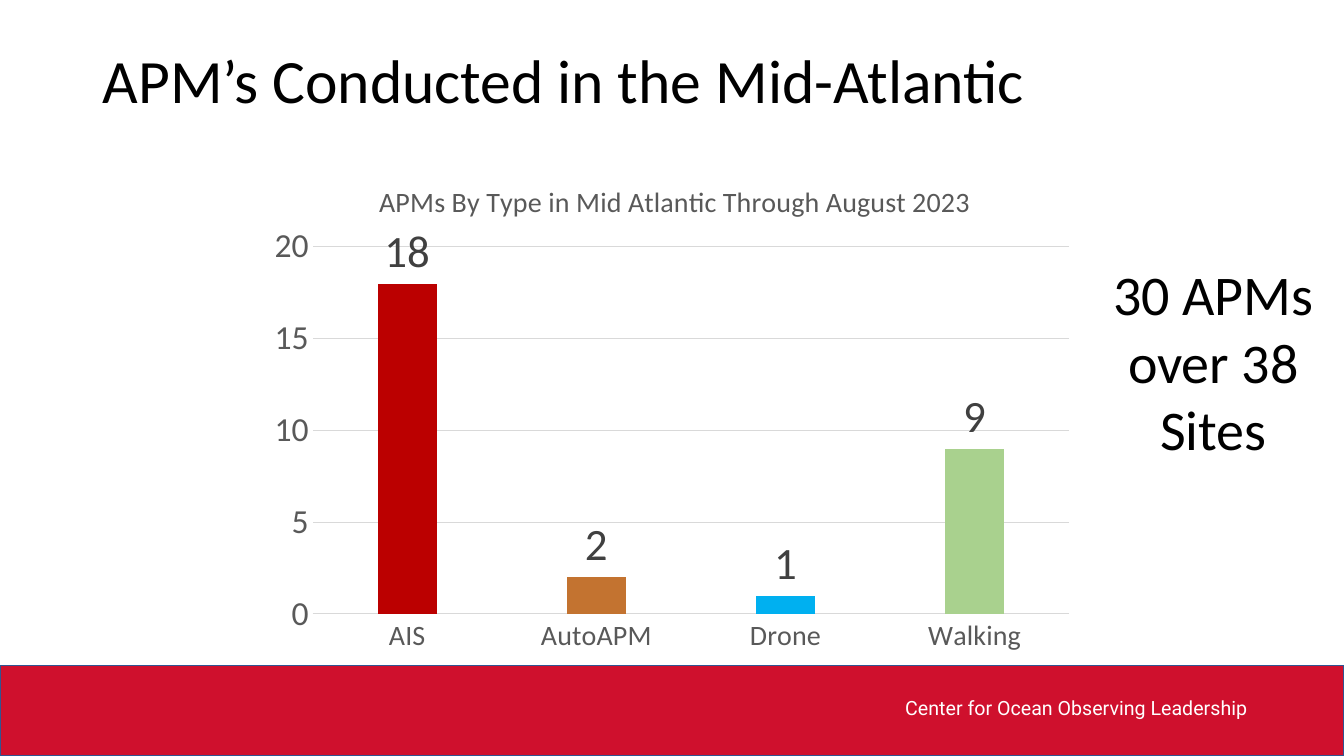
from pptx import Presentation
from pptx.chart.data import CategoryChartData as ChartData
from pptx.dml.color import RGBColor as RGB
from pptx.enum.chart import XL_CHART_TYPE as Kind, XL_LABEL_POSITION as Pos
from pptx.enum.chart import XL_TICK_MARK as Tick
from pptx.enum.shapes import MSO_SHAPE as Shape
from pptx.enum.text import MSO_ANCHOR as Anchor, PP_ALIGN as Align
from pptx.oxml import parse_xml
from pptx.oxml.ns import nsdecls
from pptx.util import Inches, Pt

RED = RGB(0xCF, 0x10, 0x2D)
NAVY = RGB(0x32, 0x54, 0x91)
WHITE = RGB(0xFF, 0xFF, 0xFF)
BLACK = RGB(0, 0, 0)
GRAY = RGB(0x59, 0x59, 0x59)
DARK = RGB(0x40, 0x40, 0x40)
PALE = RGB(0xD9, 0xD9, 0xD9)
BLUE = RGB(0x44, 0x72, 0xC4)
COUNTS = {
    "AIS": (18, RGB(0xBB, 0, 0)),
    "AutoAPM": (2, RGB(0xC3, 0x73, 0x30)),
    "Drone": (1, RGB(0, 0xB0, 0xF0)),
    "Walking": (9, RGB(0xA9, 0xD1, 0x8E)),
}


def style(font, size, color, name="Calibri"):
    font.size, font.name, font.bold = Pt(size), name, False
    font.color.rgb = color


def add_text(slide, box, text, size, color=BLACK, font="Calibri",
             align=Align.LEFT, anchor=Anchor.TOP, spacing=None):
    frame = slide.shapes.add_textbox(*map(Inches, box)).text_frame
    frame.word_wrap = True
    frame.vertical_anchor = anchor
    para = frame.paragraphs[0]
    para.alignment = align
    para.line_spacing = spacing
    run = para.add_run()
    run.text = text
    style(run.font, size, color, font)


def add_footer(slide, box):
    left, top, width, height = box
    band = slide.shapes.add_shape(Shape.RECTANGLE, *map(Inches, box))
    band.shadow.inherit = False
    band.fill.solid()
    band.fill.fore_color.rgb = RED
    band.line.color.rgb = NAVY
    band.line.width = Pt(1)
    add_text(slide, (left + width - 4.45, top + 0.26, 3.7, 0.34),
             "Center for Ocean Observing Leadership", 14, WHITE, "Roboto")


def set_layout(parent, index, **parts):
    """Place a chart part by fractions of the chart's size."""
    for old in parent.xpath("c:layout"):
        parent.remove(old)
    inner = '<c:layoutTarget val="inner"/>' if "w" in parts else ""
    modes = "".join(f'<c:{key}Mode val="edge"/>' for key in "xy")
    sizes = "".join(f'<c:{key} val="{val}"/>' for key, val in parts.items())
    parent.insert(index, parse_xml(
        f'<c:layout {nsdecls("c")}><c:manualLayout>{inner}{modes}{sizes}'
        '</c:manualLayout></c:layout>'))


def style_axis(axis, size):
    axis.major_tick_mark = axis.minor_tick_mark = Tick.NONE
    style(axis.tick_labels.font, size, GRAY)


def add_bars(slide, box):
    data = ChartData()
    data.categories = list(COUNTS)
    data.add_series("Series 1", [count for count, _ in COUNTS.values()])
    chart = slide.shapes.add_chart(
        Kind.COLUMN_CLUSTERED, *map(Inches, box), data).chart
    style(chart.font, 10, BLACK)
    chart.has_legend = False

    chart.has_title = True
    para = chart.chart_title.text_frame.paragraphs[0]
    run = para.add_run()
    run.text = "APMs By Type in Mid Atlantic Through August 2023"
    style(run.font, 20, GRAY)

    cats, vals = chart.category_axis, chart.value_axis
    style_axis(cats, 20)
    style_axis(vals, 24)
    vals.minimum_scale, vals.maximum_scale, vals.major_unit = 0, 20, 5
    vals.format.line.fill.background()
    for line in (cats.format.line, vals.major_gridlines.format.line):
        line.color.rgb = PALE
        line.width = Pt(0.75)

    plot = chart.plots[0]
    plot.gap_width, plot.overlap = 219, -27
    plot.vary_by_categories = False
    bars = plot.series[0]
    bars.format.fill.solid()
    bars.format.fill.fore_color.rgb = BLUE
    for i, (_, color) in enumerate(COUNTS.values()):
        fill = bars.points[i].format.fill
        fill.solid()
        fill.fore_color.rgb = color
    labels = bars.data_labels
    labels.show_value = True
    labels.position = Pos.OUTSIDE_END
    style(labels.font, 32, DARK)

    root = chart.element if hasattr(chart, "element") else chart._chartSpace
    set_layout(root.xpath("c:chart/c:title")[0], 1, x=0.14, y=0.04)
    set_layout(root.xpath("c:chart/c:plotArea")[0], 0,
               x=0.066, y=0.179, w=0.914, h=0.724)


def main():
    deck = Presentation()
    deck.slide_width, deck.slide_height = Inches(13.33), Inches(7.5)
    slide = deck.slides.add_slide(deck.slide_layouts[6])
    add_footer(slide, (0, 6.6, 13.33, 0.9))
    add_text(slide, (0.92, 0.1, 11.5, 1.45),
             "APM’s Conducted in the Mid-Atlantic", 44,
             anchor=Anchor.MIDDLE, spacing=0.9)
    add_bars(slide, (2.56, 1.55, 8.21, 5.03))
    add_text(slide, (10.92, 2.53, 2.23, 2.12), "30 APMs over 38 Sites", 40,
             align=Align.CENTER)
    deck.save("out.pptx")


if __name__ == "__main__":
    main()
